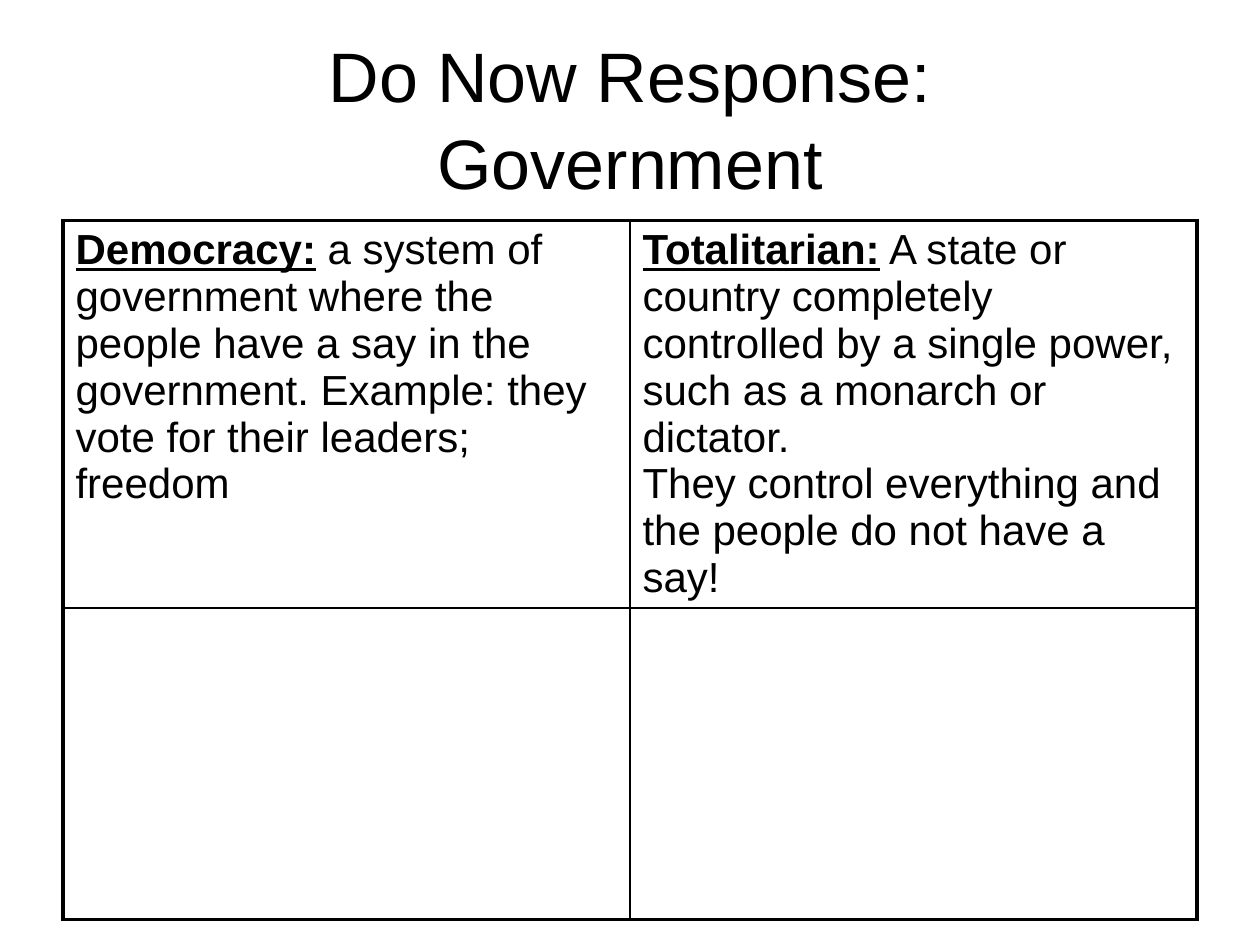
from lxml import etree
from pptx import Presentation
from pptx.dml.color import RGBColor
from pptx.enum.text import MSO_ANCHOR, PP_ALIGN
from pptx.oxml.ns import qn
from pptx.util import Pt

MIDDLE = MSO_ANCHOR.MIDDLE
CENTER = PP_ALIGN.CENTER
BLACK = "000000"
OUTER, INNER = 2.25, 1
ROW_HEIGHTS = (178.5, 178)
DEFINITIONS = [
    ("Democracy:", " a system of government where the people have a say in the "
     "government. Example: they vote for their leaders; freedom"),
    ("Totalitarian:", " A state or country completely controlled by a single power, "
     "such as a monarch or dictator.\vThey control everything and the people "
     "do not have a say!"),
]


def set_font(font, size, color):
    font.name = "Arial"
    font.size = Pt(size)
    font.color.rgb = RGBColor.from_string(color)


def add_border(cell, side, width, color):
    """Add one cell border; call in the order L, R, T, B and before any fill."""
    properties = cell._tc.get_or_add_tcPr()
    line = etree.SubElement(properties, qn(f"a:ln{side}"), w=str(Pt(width)))
    fill = etree.SubElement(line, qn("a:solidFill"))
    etree.SubElement(fill, qn("a:srgbClr"), val=color)


deck = Presentation()
deck.slide_width, deck.slide_height = Pt(720), Pt(540)
page = deck.slides.add_slide(deck.slide_layouts[5])

title = page.shapes.title
title.left, title.top, title.width, title.height = Pt(36), Pt(21.6), Pt(648), Pt(90)
title.text_frame.text = "Do Now Response:\vGovernment"
title.text_frame.vertical_anchor = MIDDLE
para = title.text_frame.paragraphs[0]
para.alignment = CENTER
para.line_spacing = 1.04
set_font(para.font, 40, BLACK)

frame = page.shapes.add_table(2, 2, Pt(36), Pt(126), Pt(648), Pt(sum(ROW_HEIGHTS)))
table = frame.table
table.first_row = table.horz_banding = False
for row, height in zip(table.rows, ROW_HEIGHTS):
    row.height = Pt(height)

for row in range(2):
    for column in range(2):
        cell = table.cell(row, column)
        outer_sides = ("LR"[column], "TB"[row])
        for side in "LRTB":
            add_border(cell, side, OUTER if side in outer_sides else INNER, BLACK)
        cell.fill.background()
        set_font(cell.text_frame.paragraphs[0].font, 24, BLACK)

for column, (term, meaning) in enumerate(DEFINITIONS):
    para = table.cell(0, column).text_frame.paragraphs[0]
    para.text = term + meaning.split("\v")[0][:0]
    para.runs[0].font.bold = para.runs[0].font.underline = True
    for index, line in enumerate(meaning.split("\v")):
        if index:
            para.add_line_break()
        para.add_run().text = line

deck.save("out.pptx")
